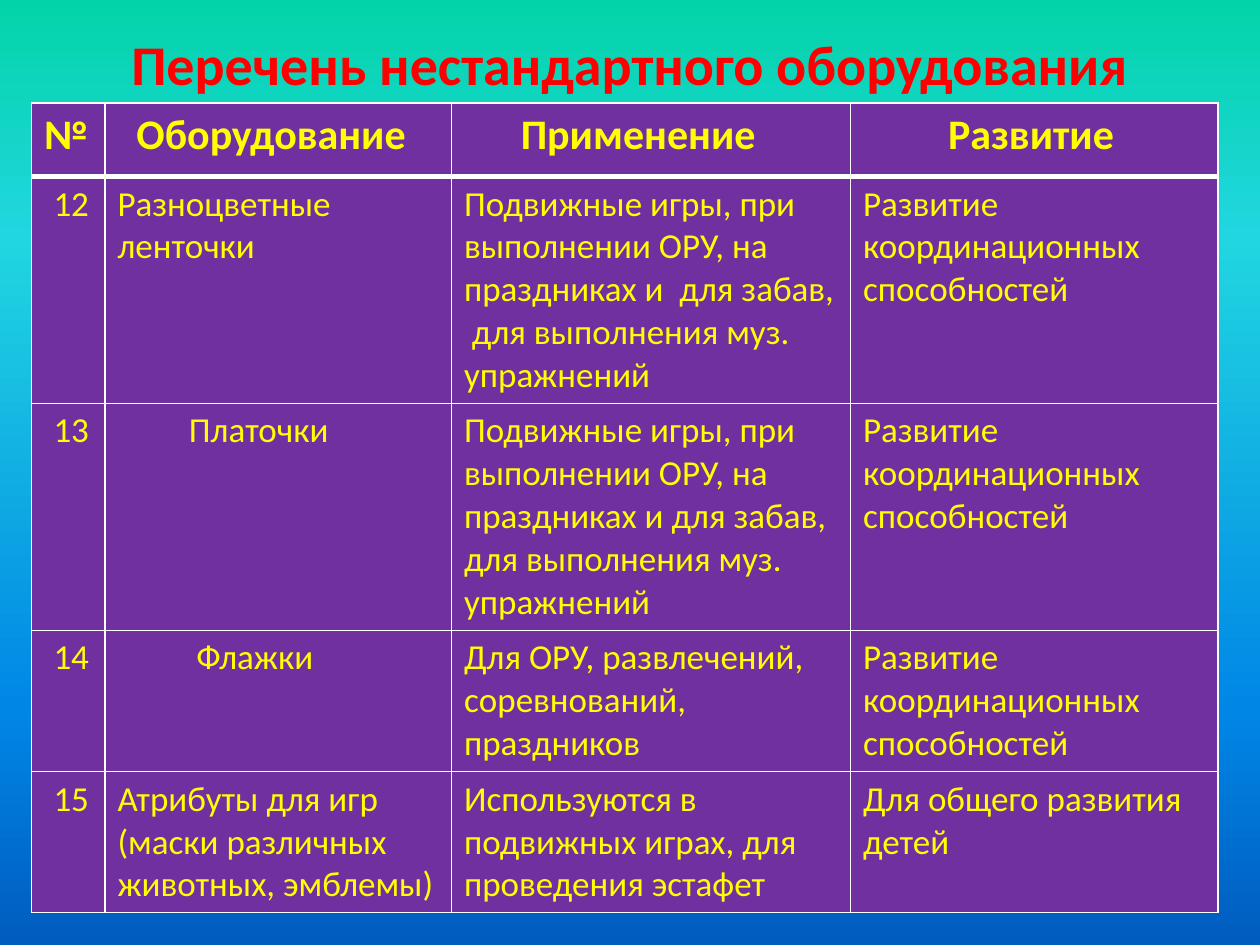
import dataclasses
import typing

import pptx
import pptx.dml.color
import pptx.enum.text
import pptx.oxml
import pptx.oxml.ns
import pptx.util

SLIDE_WIDTH = pptx.util.Inches(10)
SLIDE_HEIGHT = pptx.util.Inches(7.5)
GRID_COLUMNS = 120  # square grid: one unit is 1/120 of the slide width

FONT = "Calibri"
RED, YELLOW, PURPLE, WHITE = "FF0000", "FFFF00", "7030A0", "FFFFFF"
BACKGROUND_STOPS = {0: "03D4A8", 25: "21D6E0", 75: "0087E6", 100: "005CBF"}

COLUMN_WIDTHS = (7, 33, 38, 35)
ROW_HEIGHTS = (7, 14.5, 21, 12.8, 13)
TABLE_HEIGHT = 75.8
CELL_MARGIN = 1.2
NUMBER_INDENT = 0.9
COORDINATION = "Развитие координационных способностей"


@dataclasses.dataclass(frozen=True)
class Entry:
    """Cell text with its extra left indent in grid units."""
    text: str
    indent: float = 0


HEADER = (
    Entry("№"),
    Entry("Оборудование", 1.8),
    Entry("Применение", 5.4),
    Entry("Развитие", 8.1),
)
EQUIPMENT = (
    (Entry("Разноцветные ленточки"),
     Entry("Подвижные игры, при выполнении ОРУ, на праздниках и  для забав,  "
           "для выполнения муз. упражнений"),
     Entry(COORDINATION)),
    (Entry("Платочки", 6.8),
     Entry("Подвижные игры, при выполнении ОРУ, на праздниках и для забав, "
           "для выполнения муз. упражнений"),
     Entry(COORDINATION)),
    (Entry("Флажки", 7.5),
     Entry("Для ОРУ, развлечений, соревнований, праздников"),
     Entry(COORDINATION)),
    (Entry("Атрибуты для игр (маски различных животных, эмблемы)"),
     Entry("Используются в подвижных играх, для проведения эстафет"),
     Entry("Для общего развития детей")),
)
FIRST_NUMBER = 12


def units(count: float) -> int:
    return pptx.util.Emu(round(SLIDE_WIDTH * count / GRID_COLUMNS))


def rgb(color: str) -> pptx.dml.color.RGBColor:
    return pptx.dml.color.RGBColor.from_string(color)


def parse_drawing(xml: str):
    """Parse a DrawingML fragment whose first tag carries the namespace mark NS."""
    return pptx.oxml.parse_xml(xml.replace("NS", pptx.oxml.ns.nsdecls("a"), 1))


def format_text(paragraph, size: float, color: str, bold: bool) -> None:
    for run in paragraph.runs:
        run.font.name = FONT
        run.font.size = pptx.util.Pt(size)
        run.font.bold = bold
        run.font.color.rgb = rgb(color)


def paint_background(slide) -> None:
    fill = slide.background.fill
    fill.gradient()
    fill.gradient_angle = 270
    stops = next(slide.element.iter(pptx.oxml.ns.qn("a:gsLst")))
    for stop in list(stops):
        stops.remove(stop)
    for percent, color in BACKGROUND_STOPS.items():
        stops.append(parse_drawing(
            f'<a:gs NS pos="{percent * 1000}"><a:srgbClr val="{color}"/></a:gs>'))


def add_title(slide, text: str) -> None:
    title = slide.shapes.title
    title.left, title.top = units(3), units(2)
    title.width, title.height = units(114), units(8)
    frame = title.text_frame
    frame.text = text
    frame.vertical_anchor = pptx.enum.text.MSO_ANCHOR.MIDDLE
    paragraph = frame.paragraphs[0]
    paragraph.alignment = pptx.enum.text.PP_ALIGN.CENTER
    format_text(paragraph, 32, RED, True)


def set_borders(cell, top: float, bottom: float) -> None:
    properties = cell._tc.get_or_add_tcPr()
    widths = {"lnL": 1, "lnR": 1, "lnT": top, "lnB": bottom}
    for position, (side, width) in enumerate(widths.items()):
        properties.insert(position, parse_drawing(
            f'<a:{side} NS w="{pptx.util.Pt(width)}"><a:solidFill>'
            f'<a:srgbClr val="{WHITE}"/></a:solidFill></a:{side}>'))


def fill_cell(cell, entry: Entry, row_index: int) -> None:
    is_header = row_index == 0
    cell.text_frame.text = entry.text
    cell.margin_left = units(CELL_MARGIN + entry.indent)
    cell.fill.solid()
    cell.fill.fore_color.rgb = rgb(PURPLE)
    format_text(cell.text_frame.paragraphs[0], 24 if is_header else 20,
                YELLOW, is_header)
    set_borders(cell, top=3 if row_index == 1 else 1, bottom=3 if is_header else 1)


def add_equipment_table(slide, rows: typing.Sequence[typing.Sequence[Entry]]) -> None:
    graphic_frame = slide.shapes.add_table(
        len(rows), len(COLUMN_WIDTHS), units(3), units(9.8),
        units(sum(COLUMN_WIDTHS)), units(TABLE_HEIGHT))
    table = graphic_frame.table
    for column, width in zip(table.columns, COLUMN_WIDTHS):
        column.width = units(width)
    for row, height in zip(table.rows, ROW_HEIGHTS):
        row.height = units(height)
    graphic_frame.height = units(TABLE_HEIGHT)
    for row_index, entries in enumerate(rows):
        for column_index, entry in enumerate(entries):
            fill_cell(table.cell(row_index, column_index), entry, row_index)


def main() -> None:
    presentation = pptx.Presentation()
    presentation.slide_width = SLIDE_WIDTH
    presentation.slide_height = SLIDE_HEIGHT
    slide = presentation.slides.add_slide(presentation.slide_layouts[5])
    paint_background(slide)
    add_title(slide, "Перечень нестандартного оборудования")
    numbered = [(Entry(str(number), NUMBER_INDENT), *entries)
                for number, entries in enumerate(EQUIPMENT, FIRST_NUMBER)]
    add_equipment_table(slide, [HEADER, *numbered])
    presentation.save("out.pptx")


if __name__ == "__main__":
    main()
